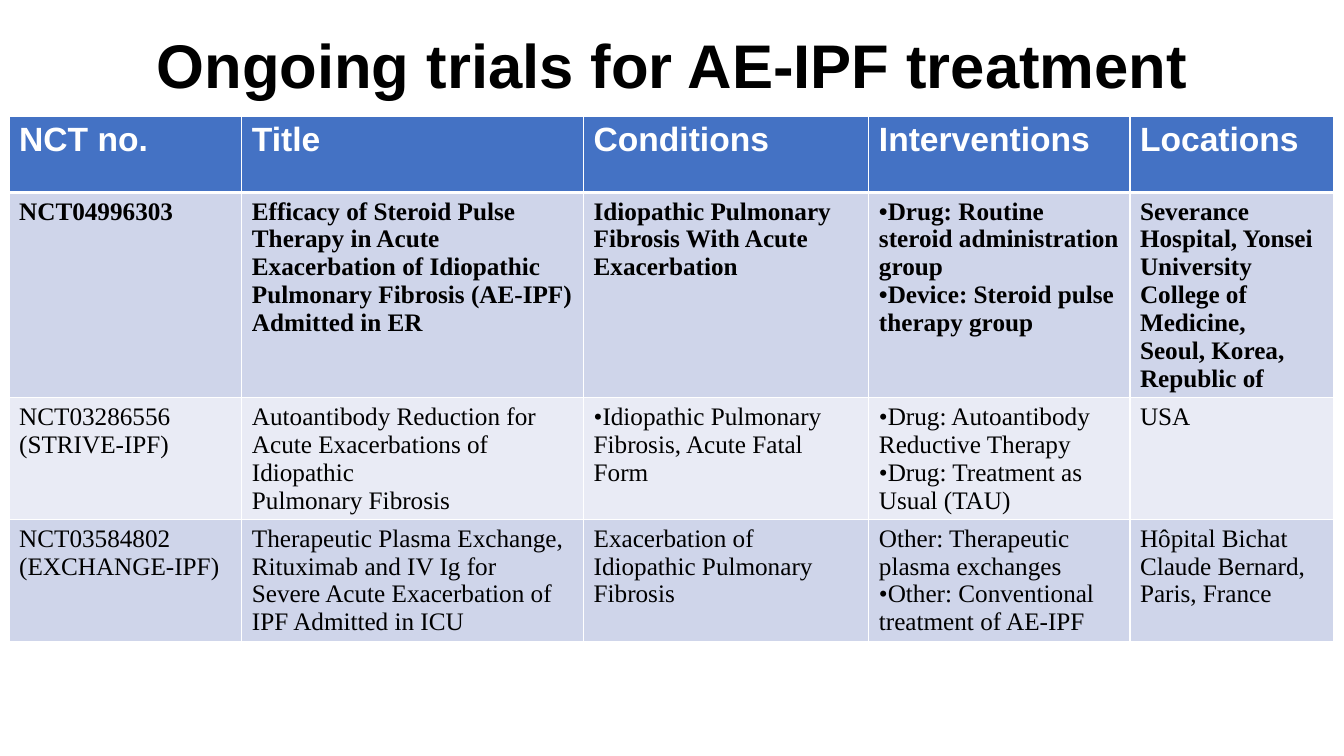
from pptx import Presentation
from pptx.dml.color import RGBColor
from pptx.enum.text import MSO_ANCHOR, PP_ALIGN
from pptx.util import Pt
from lxml.etree import SubElement
from pptx.oxml.ns import qn

BLACK = RGBColor(0, 0, 0)
WHITE = RGBColor(255, 255, 255)
BLUE = RGBColor(0x44, 0x72, 0xC4)
BANDS = [RGBColor(0xCF, 0xD5, 0xEA), RGBColor(0xE9, 0xEB, 0xF5)]

COL_WIDTHS = [166.3, 244.1, 203.8, 186.5, 145.4]
ROW_HEIGHTS = [54.7, 113, 54.7, 54.7]
HEADINGS = ["NCT no.", "Title", "Conditions", "Interventions", "Locations"]
TRIALS = [
    ["NCT04996303",
     "Efficacy of Steroid Pulse Therapy in Acute Exacerbation of Idiopathic "
     "Pulmonary Fibrosis (AE-IPF) Admitted in ER",
     "Idiopathic Pulmonary Fibrosis With Acute\nExacerbation",
     "•Drug: Routine steroid administration group\n"
     "•Device: Steroid pulse therapy group",
     "Severance Hospital, Yonsei University College of Medicine,\n"
     "Seoul, Korea, Republic of"],
    ["NCT03286556\n(STRIVE-IPF)",
     "Autoantibody Reduction for Acute Exacerbations of Idiopathic\n"
     "Pulmonary Fibrosis",
     "•Idiopathic Pulmonary Fibrosis, Acute Fatal\nForm",
     "•Drug: Autoantibody Reductive Therapy\n•Drug: Treatment as Usual (TAU)",
     "USA"],
    ["NCT03584802\n(EXCHANGE-IPF)",
     "Therapeutic Plasma Exchange, Rituximab and IV Ig for\n"
     "Severe Acute Exacerbation of IPF Admitted in ICU",
     "Exacerbation of Idiopathic Pulmonary\nFibrosis",
     "Other: Therapeutic plasma exchanges\n"
     "•Other: Conventional treatment of AE-IPF",
     "Hôpital Bichat Claude Bernard, Paris, France"],
]


def write(tf, text, font="Times New Roman", size=18, color=BLACK, bold=False,
          align=PP_ALIGN.LEFT):
    """Fill a text frame, one paragraph per line of text."""
    tf.word_wrap = True
    for i, line in enumerate(text.split("\n")):
        p = tf.paragraphs[0] if i == 0 else tf.add_paragraph()
        p.alignment = align
        r = p.add_run()
        r.text = line
        r.font.name, r.font.size, r.font.bold = font, Pt(size), bold
        r.font.color.rgb = color


def set_borders(cell, bottom):
    tc_pr = cell._tc.get_or_add_tcPr()
    for side, width in zip("LRTB", (1, 1, 1, bottom)):
        ln = SubElement(tc_pr, qn(f"a:ln{side}"), w=str(Pt(width)))
        fill = SubElement(ln, qn("a:solidFill"))
        SubElement(fill, qn("a:srgbClr"), val=str(WHITE))


def add_title(s, left, top, width, height):
    title = s.shapes.title
    title.left, title.top = Pt(left), Pt(top)
    title.width, title.height = Pt(width), Pt(height)
    title.text_frame.vertical_anchor = MSO_ANCHOR.MIDDLE
    write(title.text_frame, "Ongoing trials for AE-IPF treatment", font="Arial",
          size=44, bold=True, align=PP_ALIGN.CENTER)


def add_trials(s, left, top):
    rows = [HEADINGS] + TRIALS
    table = s.shapes.add_table(len(rows), len(HEADINGS), Pt(left), Pt(top),
                               Pt(sum(COL_WIDTHS)), Pt(sum(ROW_HEIGHTS))).table
    for column, width in zip(table.columns, COL_WIDTHS):
        column.width = Pt(width)
    for i, (row, height) in enumerate(zip(table.rows, ROW_HEIGHTS)):
        row.height = Pt(height)
        header = i == 0
        for cell, text in zip(row.cells, rows[i]):
            # The header has a heavier line below it
            set_borders(cell, bottom=3 if header else 1)
            cell.fill.solid()
            cell.fill.fore_color.rgb = BLUE if header else BANDS[(i - 1) % 2]
            if header:
                write(cell.text_frame, text, font="Arial", size=24, color=WHITE,
                      bold=True)
            else:
                # The first trial is emphasised
                write(cell.text_frame, text, bold=i == 1)


def main():
    prs = Presentation()
    prs.slide_width, prs.slide_height = Pt(960), Pt(540)
    s = prs.slides.add_slide(prs.slide_layouts[5])
    # Trials table
    add_trials(s, 6.5, 82.8)
    # Title
    add_title(s, 22.3, 8.6, 916.6, 73.4)
    prs.save("out.pptx")


if __name__ == "__main__":
    main()
